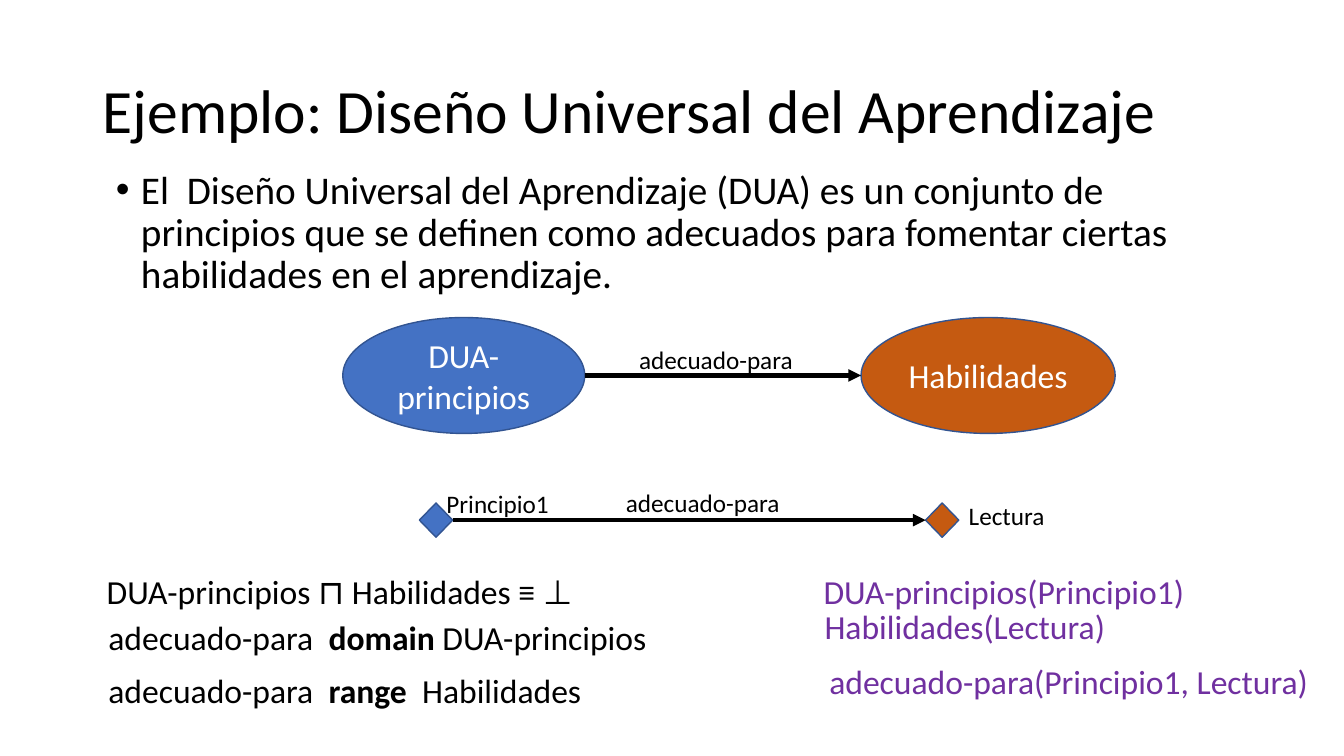
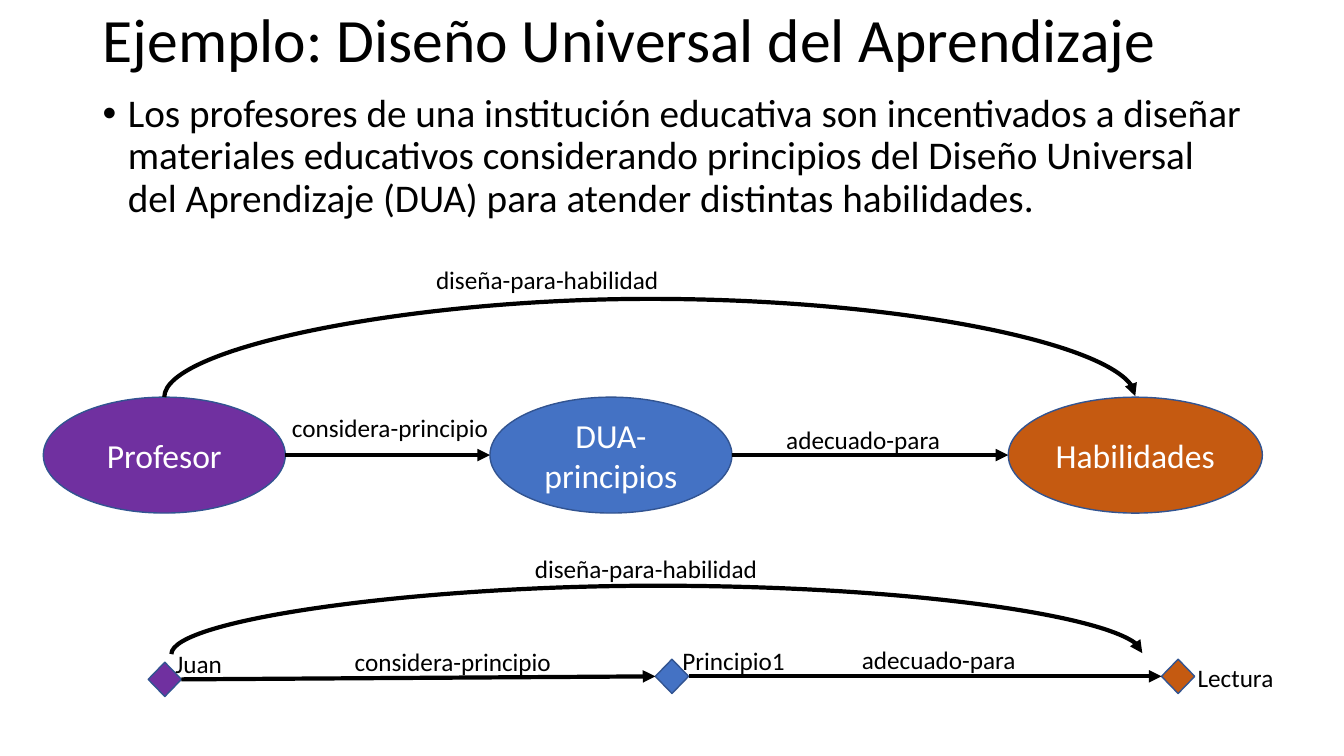
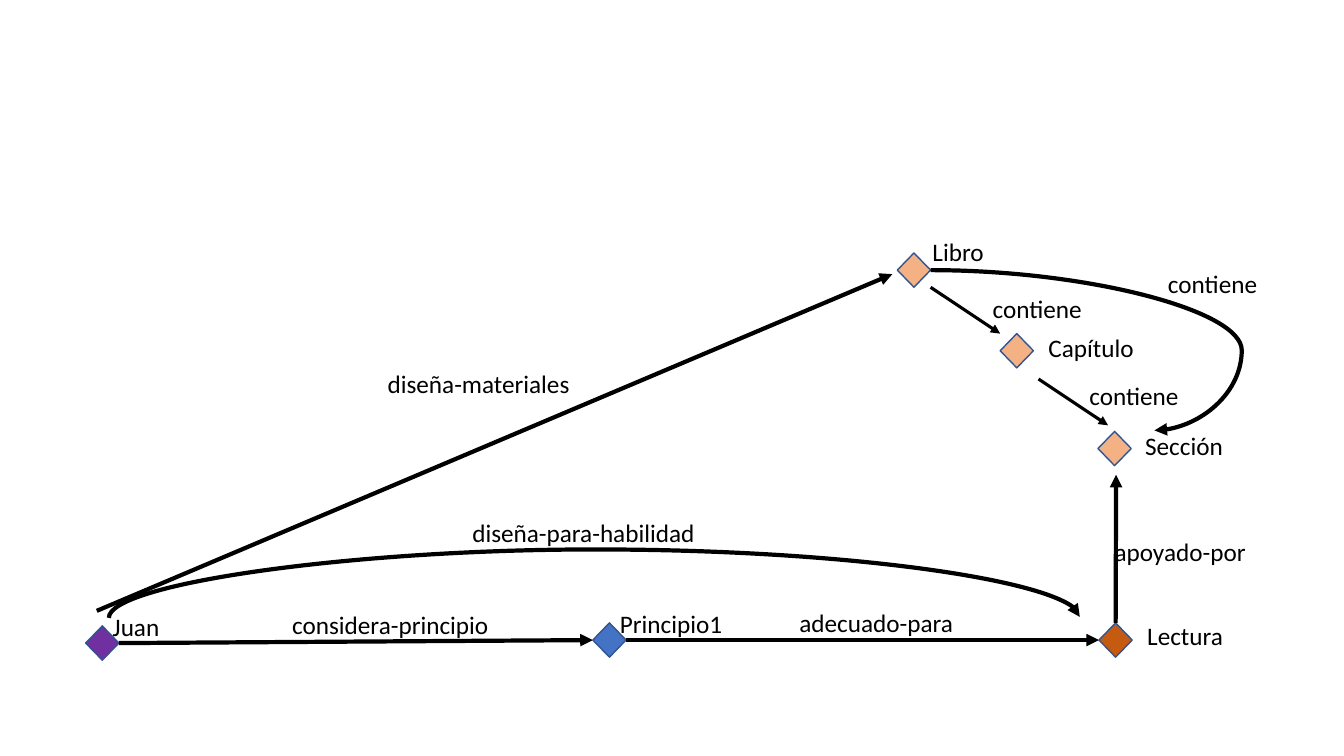
from dataclasses import dataclass
from typing import Any, Optional

import pptx
import pptx.dml.color
import pptx.enum.shapes
import pptx.enum.text
import pptx.oxml
import pptx.oxml.ns
import pptx.util

Inches = pptx.util.Inches
Pt = pptx.util.Pt
qn = pptx.oxml.ns.qn
Kind = pptx.enum.shapes.MSO_SHAPE
Link = pptx.enum.shapes.MSO_CONNECTOR
Align = pptx.enum.text.PP_ALIGN

COLORS = {
    "black": "000000",
    "white": "FFFFFF",
    "blue": "4472C4",
    "orange": "C55A11",
    "purple": "7030A0",
    "peach": "F4B183",
    "outline": "325491",
}
FONT = "Calibri"
TITLE = "Ejemplo: Diseño Universal del Aprendizaje"
TEXT_WIDTH = 11.5
CLASS_HEIGHT = 1.15
DIAMOND_WIDTH, DIAMOND_HEIGHT = 0.33, 0.34
ARCH_SPAN, ARCH_RISE = 9.63, 0.01
TOP, LEFT, RIGHT = 0, 1, 3


@dataclass(frozen=True)
class Span:
    text: str
    size: float = 18
    color: str = "black"
    bold: bool = False


@dataclass(frozen=True)
class Label:
    left: float
    top: float
    spans: tuple[Span, ...]
    width: float = 1.96
    height: float = 0.4


@dataclass(frozen=True)
class Concept:
    name: str
    left: float
    top: float
    color: str
    width: float = 2.4


@dataclass(frozen=True)
class Individual:
    name: str
    left: float
    top: float
    color: str
    name_dx: float = 0.17
    name_dy: float = -0.19


def rgb(name: str) -> pptx.dml.color.RGBColor:
    return pptx.dml.color.RGBColor.from_string(COLORS[name])


def add_span(para: Any, span: Span) -> None:
    run = para.add_run()
    run.text = span.text
    run.font.name = FONT
    run.font.size = Pt(span.size)
    run.font.bold = span.bold
    run.font.color.rgb = rgb(span.color)


def add_box(page: Any, label: Label) -> Any:
    box = page.shapes.add_textbox(
        Inches(label.left), Inches(label.top), Inches(label.width), Inches(label.height)
    )
    box.text_frame.word_wrap = True
    for span in label.spans:
        add_span(box.text_frame.paragraphs[0], span)
    return box


def draw_label(page: Any, left: float, top: float, text: str, width: float = 1.96) -> None:
    add_box(page, Label(left, top, (Span(text),), width))


def draw_title(page: Any, top: float) -> None:
    box = add_box(page, Label(0.92, top, (Span(TITLE, 44),), TEXT_WIDTH, 1.45))
    box.text_frame.vertical_anchor = pptx.enum.text.MSO_ANCHOR.MIDDLE
    box.text_frame.paragraphs[0].line_spacing = 0.9


def draw_bullet(page: Any, left: float, top: float, text: str) -> None:
    box = add_box(page, Label(left, top, (Span(text, 28),), TEXT_WIDTH, 1.45))
    para = box.text_frame.paragraphs[0]
    para.line_spacing = 0.9
    para.space_before = Pt(10)
    properties = para._p.get_or_add_pPr()
    properties.set("marL", str(Inches(0.25)))
    properties.set("indent", str(Inches(-0.25)))
    font = pptx.oxml.ns.nsdecls("a")
    properties.append(pptx.oxml.parse_xml(f'<a:buFont {font} typeface="Arial"/>'))
    properties.append(pptx.oxml.parse_xml(f'<a:buChar {font} char="•"/>'))


def add_figure(
    page: Any, kind: Any, left: float, top: float, width: float, height: float, color: str
) -> Any:
    figure = page.shapes.add_shape(
        kind, Inches(left), Inches(top), Inches(width), Inches(height)
    )
    figure.shadow.inherit = False
    figure.fill.solid()
    figure.fill.fore_color.rgb = rgb(color)
    figure.line.color.rgb = rgb("outline")
    figure.line.width = Pt(1)
    return figure


def draw_concept(page: Any, concept: Concept) -> None:
    oval = add_figure(
        page, Kind.OVAL, concept.left, concept.top, concept.width, CLASS_HEIGHT, concept.color
    )
    para = oval.text_frame.paragraphs[0]
    para.alignment = Align.CENTER
    add_span(para, Span(concept.name, 24, "white"))


def draw_individual(page: Any, item: Individual) -> Any:
    diamond = add_figure(
        page, Kind.DIAMOND, item.left, item.top, DIAMOND_WIDTH, DIAMOND_HEIGHT, item.color
    )
    draw_label(page, item.left + item.name_dx, item.top + item.name_dy, item.name)
    return diamond


def add_arrow(
    page: Any,
    start: tuple[float, float],
    end: tuple[float, float],
    width: float = 3,
    kind: Any = Link.STRAIGHT,
    bend: Optional[float] = None,
) -> Any:
    arrow = page.shapes.add_connector(kind, *(Inches(value) for value in (*start, *end)))
    arrow.line.color.rgb = rgb("black")
    arrow.line.width = Pt(width)
    properties = arrow.element.spPr
    tail = properties.find(qn("a:ln")).makeelement(qn("a:tailEnd"), {"type": "triangle"})
    properties.find(qn("a:ln")).append(tail)
    properties.append(properties.makeelement(qn("a:effectLst"), {}))
    if bend is not None:
        guides = properties.find(qn("a:prstGeom")).find(qn("a:avLst"))
        guide = {"name": "adj1", "fmla": f"val {round(bend * 100000)}"}
        guides.append(guides.makeelement(qn("a:gd"), guide))
    return arrow


def join(page: Any, source: Any, target: Any) -> None:
    arrow = add_arrow(page, (0, 0), (1, 1))
    arrow.begin_connect(source, RIGHT)
    arrow.end_connect(target, LEFT)


def draw_arch(page: Any, left: float, bottom: float, lift: float) -> None:
    middle_x = left + ARCH_SPAN / 2
    middle_y = bottom - ARCH_RISE / 2
    arch = add_arrow(
        page,
        (middle_x + ARCH_RISE / 2, middle_y + ARCH_SPAN / 2),
        (middle_x - ARCH_RISE / 2, middle_y - ARCH_SPAN / 2),
        kind=Link.CURVE,
        bend=lift / ARCH_RISE,
    )
    arch.element.spPr.find(qn("a:xfrm")).set("rot", str(90 * 60000))


def draw_concept_pair(page: Any, left: float, top: float) -> None:
    draw_concept(page, Concept("DUA-principios", left, top, "blue"))
    draw_concept(page, Concept("Habilidades", left + 5.14, top, "orange", 2.52))
    middle = top + CLASS_HEIGHT / 2
    add_arrow(page, (left + 2.4, middle), (left + 5.14, middle))
    draw_label(page, left + 2.84, top + 0.22, "adecuado-para")


def draw_individual_pair(
    page: Any, left: float, top: float, name_dx: float, name_dy: float
) -> tuple[Any, Any]:
    principle = draw_individual(page, Individual("Principio1", left, top, "blue"))
    reading = draw_individual(
        page, Individual("Lectura", left + 5.02, top, "orange", name_dx, name_dy)
    )
    join(page, principle, reading)
    draw_label(page, left + 1.95, top - 0.2, "adecuado-para")
    return principle, reading


def draw_individual_chain(
    page: Any, left: float, top: float, name_dx: float, name_dy: float
) -> Any:
    principle, reading = draw_individual_pair(page, left, top, name_dx, name_dy)
    teacher = draw_individual(page, Individual("Juan", left - 5.03, top + 0.03, "purple"))
    join(page, teacher, principle)
    draw_label(page, left - 3.08, top - 0.18, "considera-principio", 2.4)
    draw_arch(page, left - 4.8, top - 0.05, 0.69)
    draw_label(page, left - 1.35, top - 1.1, " diseña-para-habilidad", 3.53)
    return reading


def build_definition(page: Any) -> None:
    draw_title(page, 0.4)
    draw_bullet(
        page,
        1.05,
        1.64,
        "El  Diseño Universal del Aprendizaje (DUA) es un conjunto de principios que se "
        "definen como adecuados para fomentar ciertas habilidades en el aprendizaje.",
    )
    draw_concept_pair(page, 3.4, 3.15)
    draw_individual_pair(page, 4.16, 4.99, 0.33, -0.08)
    relation = (Span(" "), Span("adecuado-para  ", 24))
    axioms = (
        Label(0.96, 5.61, (Span("DUA-principios ⊓ Habilidades ≡ ⊥", 24),), 6.66, 0.5),
        Label(
            0.92,
            6.07,
            (*relation, Span("domain", 24, bold=True), Span(" DUA-principios", 24)),
            5.75,
            0.5,
        ),
        Label(
            0.92,
            6.6,
            (*relation, Span("range  ", 24, bold=True), Span("Habilidades", 24)),
            6.45,
            0.5,
        ),
        Label(8.07, 5.61, (Span("DUA-principios(Principio1)", 24, "purple"),), 6.66, 0.5),
        Label(8.08, 5.96, (Span("Habilidades(Lectura)", 24, "purple"),), 6.66, 0.5),
        Label(
            8.07,
            6.51,
            (Span(" "), Span("adecuado-para(Principio1, Lectura)", 24, "purple")),
            5.75,
            0.5,
        ),
    )
    for axiom in axioms:
        add_box(page, axiom)


def build_teacher(page: Any) -> None:
    draw_title(page, -0.3)
    draw_bullet(
        page,
        0.92,
        0.88,
        "Los profesores de una institución educativa son incentivados a diseñar materiales "
        "educativos considerando principios del Diseño Universal del Aprendizaje (DUA) para "
        "atender distintas habilidades.",
    )
    draw_concept_pair(page, 4.86, 3.94)
    draw_concept(page, Concept("Profesor", 0.43, 3.94, "purple"))
    middle = 3.94 + CLASS_HEIGHT / 2
    add_arrow(page, (2.83, middle), (4.86, middle))
    draw_label(page, 2.74, 4.04, " considera-principio", 2.21)
    draw_arch(page, 1.63, 3.94, 0.99)
    draw_label(page, 4.17, 2.57, " diseña-para-habilidad", 3.53)
    draw_individual_chain(page, 6.5, 6.54, 0.26, -0.02)


def build_materials(page: Any) -> None:
    reading = draw_individual_chain(page, 5.88, 6.18, 0.38, -0.07)
    support = add_arrow(page, (11.07, 6.17), (11.07, 4.71))
    support.begin_connect(reading, TOP)
    for part in (
        Individual("Libro", 8.9, 2.51, "peach", 0.25, -0.21),
        Individual("Capítulo", 9.92, 3.31, "peach", 0.38, -0.06),
        Individual("Sección", 10.89, 4.28, "peach", 0.37, -0.06),
    ):
        draw_individual(page, part)
    for left, top in ((9.23, 2.85), (10.3, 3.76)):
        add_arrow(page, (left, top), (left + 0.69, top + 0.46), 2.25)
    add_arrow(page, (9.23, 2.68), (11.45, 4.27), kind=Link.CURVE, bend=1.39)
    add_arrow(page, (0.96, 6.06), (8.85, 2.72))
    for left, top, text in (
        (10.9, 5.27, " apoyado-por"),
        (9.69, 2.86, " contiene"),
        (10.65, 3.72, " contiene"),
        (11.43, 2.61, " contiene"),
        (3.69, 3.6, " diseña-materiales"),
    ):
        draw_label(page, left, top, text, 3.53)


def main() -> None:
    deck = pptx.Presentation()
    deck.slide_width = Inches(13.33)
    deck.slide_height = Inches(7.5)
    for build in (build_definition, build_teacher, build_materials):
        build(deck.slides.add_slide(deck.slide_layouts[6]))
    deck.save("out.pptx")


if __name__ == "__main__":
    main()
